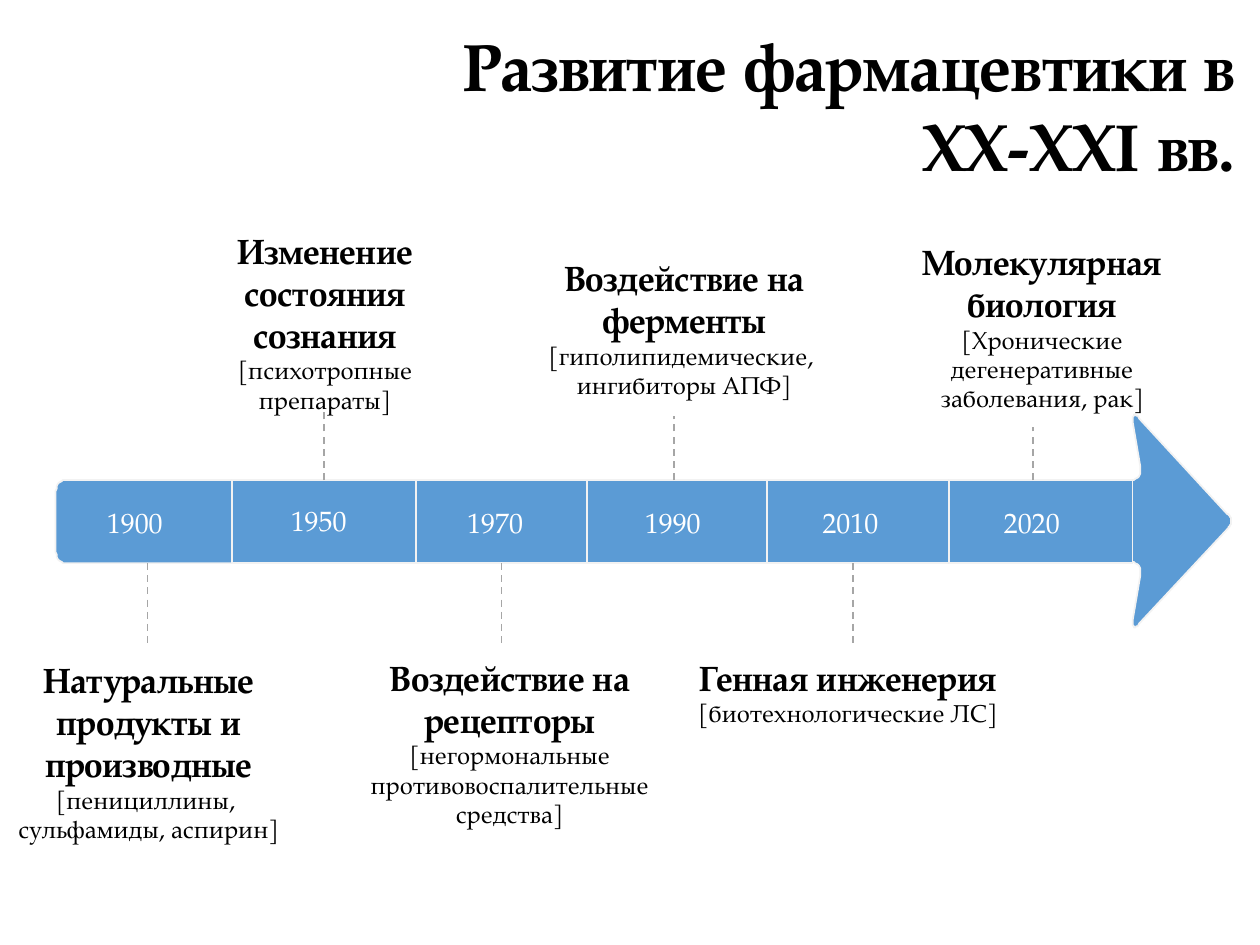
from pptx import Presentation
from pptx.dml.color import RGBColor
from pptx.enum.dml import MSO_LINE
from pptx.enum.shapes import MSO_CONNECTOR, MSO_SHAPE
from pptx.enum.text import MSO_ANCHOR, MSO_AUTO_SIZE, PP_ALIGN
from pptx.oxml.ns import qn
from pptx.util import Pt
from lxml.etree import SubElement

PX = 9144  # EMU in one px, 100 px to the inch
FONT = "TeX Gyre Pagella"
BLACK = RGBColor(0x00, 0x00, 0x00)
WHITE = RGBColor(0xFF, 0xFF, 0xFF)
BLUE = RGBColor(0x5B, 0x9B, 0xD5)
PALE = RGBColor(0xF2, 0xF2, 0xF2)
GREY = RGBColor(0xA6, 0xA6, 0xA6)

BAND_TOP, BAND_HEIGHT, SEGMENT_WIDTH = 381, 66, 146
BAND_BOTTOM = BAND_TOP + BAND_HEIGHT
STEM_BOTTOM = 514

# Year, segment left, year box left and top, stem x and outer y,
# label box, label paragraphs as (bold heading, plain detail)
STAGES = [
    ("1900", 44, (75, 396), (117, STEM_BOTTOM), (0, 518, 236, 158),
     [("Натуральные продукты и производные", ""),
      ("", "[пенициллины, "), ("", "сульфамиды, аспирин]")]),
    ("1970", 325, (361, 396), (398, STEM_BOTTOM), (278, 516, 253, 148),
     [("Воздействие на рецепторы ",
       "[негормональные противовоспалительные средства]")]),
    ("1950", 184, (221, 395), (257, 315), (125, 177, 266, 135),
     [("Изменение состояния сознания ", "[психотропные препараты]")]),
    ("1990", 466, (502, 396), (535, 330), (401, 199, 284, 125),
     [("Воздействие на ферменты ", "[гиполипидемические, "),
      ("", "ингибиторы АПФ]")]),
    ("2010", 609, (643, 396), (677, STEM_BOTTOM), (531, 516, 284, 67),
     [("Генная инженерия ", "[биотехнологические ЛС]")]),
    ("2020", 753, (787, 396), (820, 339), (701, 186, 252, 148),
     [("Молекулярная биология ",
       "[Хронические дегенеративные заболевания, рак]")]),
]


def px(*lengths):
    return [length * PX for length in lengths]


def add_span(para, text, size, color=BLACK, bold=False):
    span = para.add_run()
    span.text = text
    span.font.name, span.font.size, span.font.bold = FONT, Pt(size), bold
    span.font.color.rgb = color


def add_text(page, box, paragraphs, align=PP_ALIGN.LEFT):
    """Each paragraph is a list of (text, format) pairs."""
    frame = page.shapes.add_textbox(*px(*box)).text_frame
    frame.word_wrap = True
    frame.auto_size = MSO_AUTO_SIZE.SHAPE_TO_FIT_TEXT
    for index, spans in enumerate(paragraphs):
        para = frame.add_paragraph() if index else frame.paragraphs[0]
        para.alignment = align
        for text, style in spans:
            add_span(para, text, **style)


def paint(shape):
    shape.shadow.inherit = False
    shape.fill.solid()
    shape.fill.fore_color.rgb = BLUE
    shape.line.color.rgb = PALE
    shape.line.width = Pt(1)
    return shape


def curve(start, first, second, end, steps=8):
    """Points along a cubic curve, after its start."""
    points = []
    for step in range(1, steps + 1):
        t = step / steps
        weights = (1 - t) ** 3, 3 * t * (1 - t) ** 2, 3 * t * t * (1 - t), t ** 3
        points.append(tuple(sum(w * point[axis] for w, point in
                                zip(weights, (start, first, second, end)))
                            for axis in (0, 1)))
    return points


def add_outline(page, left, top, points):
    points = [(left + x, top + y) for x, y in points]
    builder = page.shapes.build_freeform(*points[0], scale=PX)
    builder.add_line_segments(points[1:], close=True)
    return paint(builder.convert_to_shape())


def add_title(page, box):
    title = page.shapes.title
    title.left, title.top, title.width, title.height = px(*box)
    frame = title.text_frame
    frame.word_wrap = True
    frame.vertical_anchor = MSO_ANCHOR.TOP
    frame.margin_left = frame.margin_top = frame.margin_right = 20 * PX
    frame.margin_bottom = 5 * PX
    para = frame.paragraphs[0]
    para.alignment = PP_ALIGN.RIGHT
    add_span(para, "Развитие фармацевтики в ХХ-ХХI вв.", 38, bold=True)


def add_rounded_end(page, left, top):
    """First segment, rounded on its left side."""
    width, height = SEGMENT_WIDTH, BAND_HEIGHT
    points = [(width, 0), (width, height), (8, height)]
    points += curve((8, height), (3, height), (0, height - 5), (0, height - 11))
    points += [(0, 11)] + curve((0, 11), (0, 5), (3, 0), (8, 0))
    return add_outline(page, left, top, points)


def add_arrow_head(page, left, top):
    """Upper half from the tip to the band, then its mirror image."""
    middle = 86.5
    upper = curve((79, middle), (79, 84), (78, 82), (76, 80.5))
    upper += [(6, 5)] + curve((6, 5), (3, 0), (1, 2), (1, 8))
    upper += [(7, 43)] + curve((7, 43), (8, 49), (5, 54), (0, 54))
    lower = [(x, 2 * middle - y) for x, y in reversed(upper)]
    add_outline(page, left, top, upper + lower)


def add_stem(page, segment, segment_left, x, outer_y):
    below = outer_y > BAND_TOP
    edge = BAND_BOTTOM if below else BAND_TOP
    stem = page.shapes.add_connector(
        MSO_CONNECTOR.STRAIGHT, *px(x, edge, x, outer_y))
    stem.line.color.rgb = GREY
    stem.line.width = Pt(1)
    stem.line.dash_style = MSO_LINE.DASH
    SubElement(stem._element.spPr, qn("a:effectLst"))
    at_middle = x == segment_left + SEGMENT_WIDTH / 2
    if at_middle and segment.shape_type != 5 and segment_left != STAGES[0][1]:
        stem.begin_connect(segment, 2 if below else 0)


def add_stage(page, year, left, year_at, stem, label_box, label):
    # Segment of the band
    if left == STAGES[0][1]:
        segment = add_rounded_end(page, left, BAND_TOP)
    else:
        segment = paint(page.shapes.add_shape(
            MSO_SHAPE.RECTANGLE,
            *px(left, BAND_TOP, SEGMENT_WIDTH, BAND_HEIGHT)))
    add_stem(page, segment, left, *stem)
    # Year and label
    add_text(page, (*year_at, 73, 37), [[(year, dict(size=16, color=WHITE))]])
    heading_style, detail_style = dict(size=20, bold=True), dict(size=14)
    paragraphs = [[(text, style) for text, style in
                   ((heading, heading_style), (detail, detail_style)) if text]
                  for heading, detail in label]
    add_text(page, label_box, paragraphs, align=PP_ALIGN.CENTER)


def main():
    deck = Presentation()
    deck.slide_width, deck.slide_height = px(1000, 750)
    page = deck.slides.add_slide(deck.slide_layouts[5])
    add_title(page, (251, 0, 749, 153))
    add_arrow_head(page, 898, 327)
    for stage in STAGES:
        add_stage(page, *stage)
    deck.save("out.pptx")


if __name__ == "__main__":
    main()
